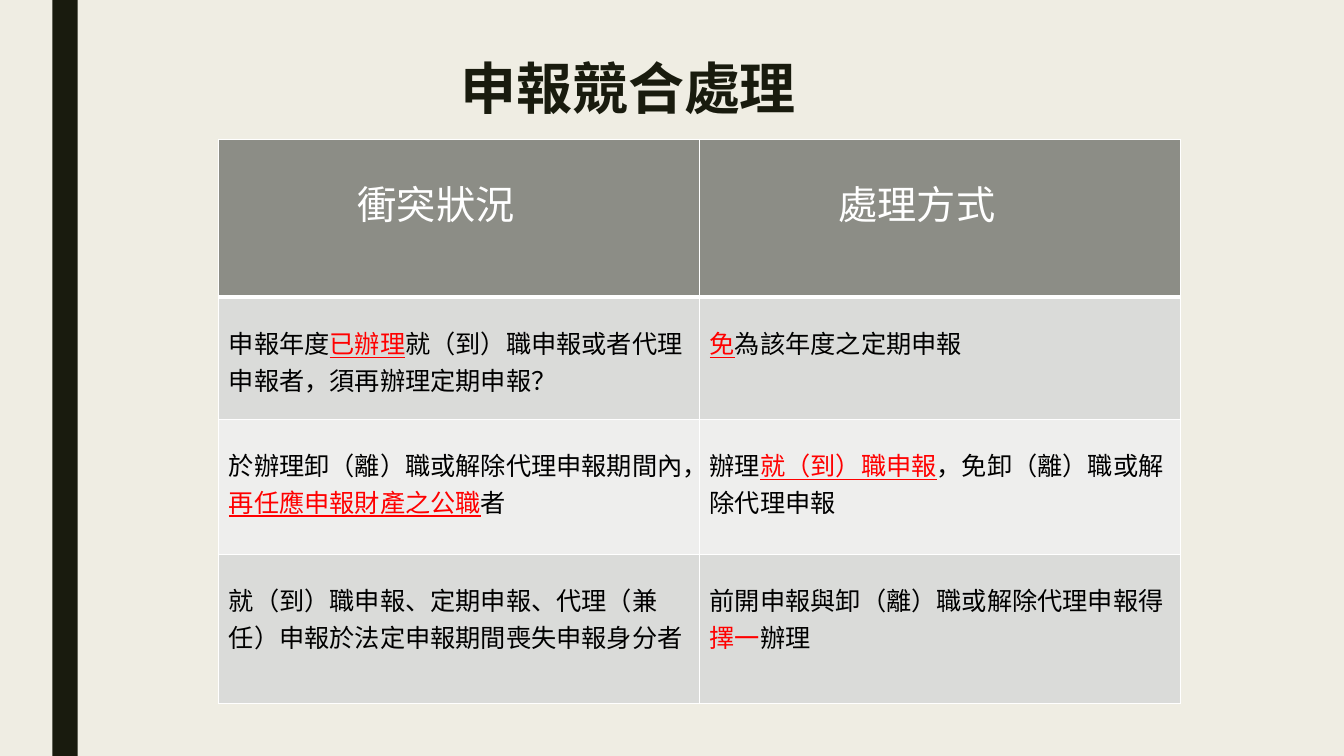
"""Slide with a two-column table on handling overlapping declarations."""
from lxml import etree
from pptx import Presentation
from pptx.dml.color import RGBColor
from pptx.enum.shapes import MSO_SHAPE
from pptx.enum.text import MSO_ANCHOR, PP_ALIGN
from pptx.oxml.ns import qn
from pptx.util import Inches, Pt

RECTANGLE = MSO_SHAPE.RECTANGLE
CENTER, LEFT = PP_ALIGN.CENTER, PP_ALIGN.LEFT
TOP, MIDDLE = MSO_ANCHOR.TOP, MSO_ANCHOR.MIDDLE

TITLE = "申報競合處理"
HEADERS = ["衝突狀況", "處理方式"]
ROWS = [
    [[("申報年度", "plain"), ("已辦理", "marked"),
      ("就（到）職申報或者代理申報者，須再辦理定期申報？", "plain")],
     [("免", "marked"), ("為該年度之定期申報", "plain")]],
    [[("於辦理卸（離）職或解除代理申報期間內，", "plain"),
      ("再任應申報財產之公職", "marked"), ("者", "plain")],
     [("辦理", "plain"), ("就（到）職申報", "marked"),
      ("，免卸（離）職或解除代理申報", "plain")]],
    [[("就（到）職申報、定期申報、代理（兼任）申報於法定申報期間喪失申報身分者", "plain")],
     [("前開申報與卸（離）職或解除代理申報得", "plain"), ("擇一", "red"),
      ("辦理", "plain")]],
]

COLORS = {"background": "EFEDE3", "dark": "191B0E", "header": "8C8D86", "odd": "DADBD9",
          "even": "EEEEED", "white": "FFFFFF", "black": "000000", "red": "FF0000"}
FORMATS = {
    "title": ({"size": Pt(40), "bold": True, "name": "Noto Sans CJK SC"}, "dark"),
    "header": ({"size": Pt(28), "bold": False, "name": "Karla"}, "white"),
    "plain": ({"size": Pt(18), "bold": False, "name": "Karla"}, "black"),
    "marked": ({"size": Pt(18), "bold": False, "name": "Karla", "underline": True}, "red"),
    "red": ({"size": Pt(18), "bold": False, "name": "Karla"}, "red"),
}
ASIAN_FONTS = {"title": "Noto Sans CJK SC"}
SLIDE_WIDTH, SLIDE_HEIGHT = 13.33, 7.5
BAR = (0.52, 0, 0.25, SLIDE_HEIGHT)
TITLE_BOX = (2.2, 0.39, 8.06, 0.95)
TABLE_LEFT, TABLE_TOP, COLUMN_WIDTH = 2.17, 1.38, 4.77
ROW_HEIGHTS = [1.57, 1.21, 1.34, 1.48]
HEADER_MARGINS = {"margin_left": 0.1, "margin_right": 0.56, "margin_top": 0.35}
BODY_MARGINS = {"margin_left": 0.1, "margin_right": 0.1, "margin_top": 0.27}


def color(name):
    return RGBColor.from_string(COLORS[name])


def paint(fill, name):
    fill.solid()
    fill.fore_color.rgb = color(name)


def write(paragraph, runs, alignment):
    paragraph.alignment = alignment
    for text, style in runs:
        run = paragraph.add_run()
        run.text = text
        values, color_name = FORMATS[style]
        for attribute, value in values.items():
            setattr(run.font, attribute, value)
        run.font.color.rgb = color(color_name)
        asian = etree.SubElement(run._r.get_or_add_rPr(), qn("a:ea"))
        asian.set("typeface", ASIAN_FONTS.get(style, "Noto Sans CJK TC"))


def add_borders(cell, widths):
    properties = cell._tc.get_or_add_tcPr()
    for index, (side, width) in enumerate(widths.items()):
        line = etree.Element(qn(f"a:ln{side}"), w=str(Pt(width)))
        fill = etree.SubElement(line, qn("a:solidFill"))
        etree.SubElement(fill, qn("a:srgbClr"), val=COLORS["white"])
        properties.insert(index, line)


def add_table(slide):
    contents = [[[(text, "header")] for text in HEADERS]] + ROWS
    table = slide.shapes.add_table(
        len(contents), len(HEADERS), Inches(TABLE_LEFT), Inches(TABLE_TOP),
        Inches(COLUMN_WIDTH * len(HEADERS)), Inches(sum(ROW_HEIGHTS))).table
    for column in table.columns:
        column.width = Inches(COLUMN_WIDTH)
    for row_index, row in enumerate(contents):
        table.rows[row_index].height = Inches(ROW_HEIGHTS[row_index])
        is_header = row_index == 0
        fill_name = "header" if is_header else ("even", "odd")[row_index % 2]
        margins = HEADER_MARGINS if is_header else BODY_MARGINS
        borders = {"L": 1, "R": 1, "T": 3 if row_index == 1 else 1, "B": 3 if is_header else 1}
        for column_index, runs in enumerate(row):
            cell = table.cell(row_index, column_index)
            paint(cell.fill, fill_name)
            cell.vertical_anchor = TOP
            for attribute, value in margins.items():
                setattr(cell, attribute, Inches(value))
            add_borders(cell, borders)
            write(cell.text_frame.paragraphs[0], runs, CENTER if is_header else LEFT)


def main():
    presentation = Presentation()
    presentation.slide_width = Inches(SLIDE_WIDTH)
    presentation.slide_height = Inches(SLIDE_HEIGHT)
    slide = presentation.slides.add_slide(presentation.slide_layouts[6])
    paint(slide.background.fill, "background")

    bar = slide.shapes.add_shape(RECTANGLE, *map(Inches, BAR))
    bar.shadow.inherit = False
    paint(bar.fill, "dark")
    bar.line.fill.background()

    title_frame = slide.shapes.add_textbox(*map(Inches, TITLE_BOX)).text_frame
    title_frame.word_wrap = True
    title_frame.vertical_anchor = MIDDLE
    write(title_frame.paragraphs[0], [(TITLE, "title")], CENTER)

    add_table(slide)
    presentation.save("out.pptx")


if __name__ == "__main__":
    main()
